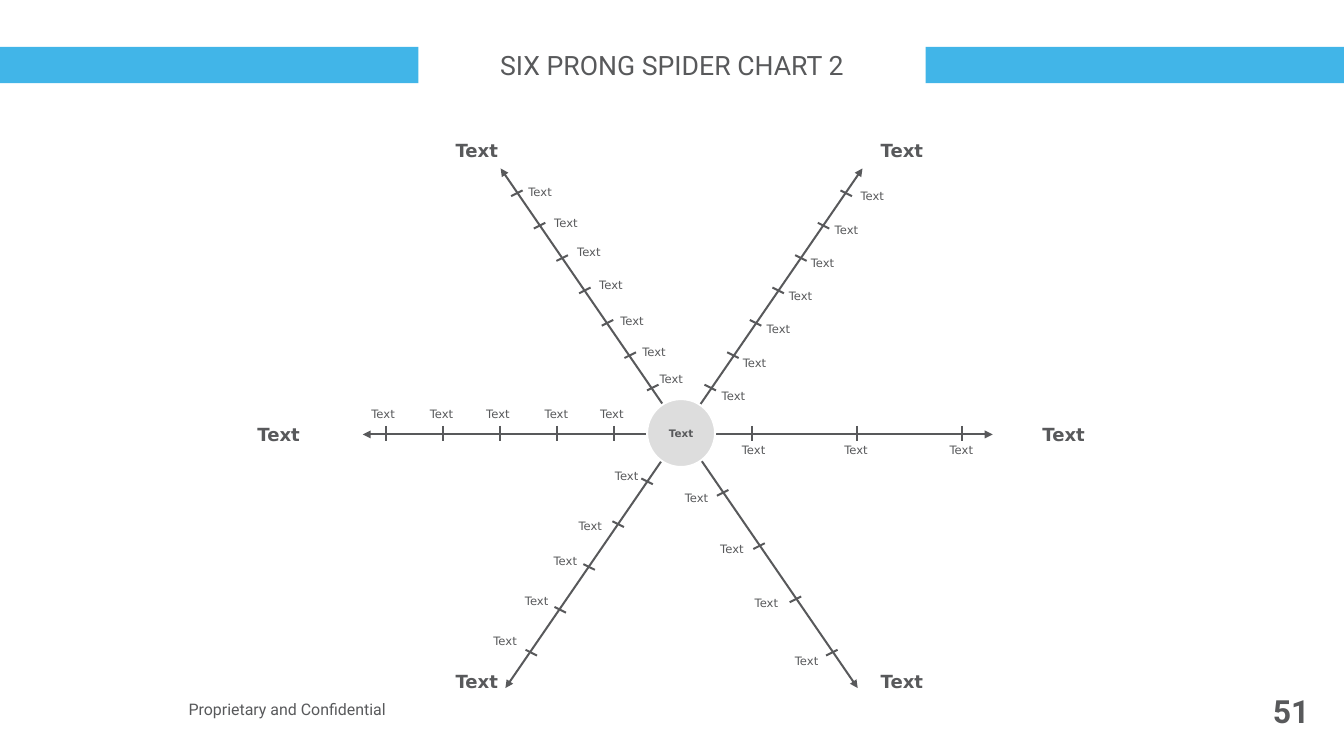
from dataclasses import dataclass

from lxml.etree import SubElement
from pptx import Presentation
from pptx.dml.color import RGBColor
from pptx.enum.shapes import MSO_CONNECTOR, MSO_SHAPE
from pptx.enum.text import MSO_ANCHOR, PP_ALIGN
from pptx.oxml.ns import qn
from pptx.shapes.autoshape import Shape
from pptx.slide import Slide
from pptx.util import Inches, Pt

Point = tuple[float, float]
Box = tuple[float, float, float, float]


@dataclass(frozen=True)
class Theme:
    blue: str = "41B5E8"
    ink: str = "58595B"
    pale: str = "DDDDDD"
    white: str = "FFFFFF"
    line: float = 1.5
    sans: str = "Roboto"
    label: str = "DejaVu Sans"
    title: float = 20
    foot: float = 12
    page: float = 24
    head: float = 13.6
    tick: float = 8.7
    hub: float = 7.8


@dataclass(frozen=True)
class Prong:
    """Ticks run evenly from first to last, one for each label corner."""
    head: Point
    first: Point
    last: Point
    slant: Point
    labels: list[Point]
    align: PP_ALIGN = PP_ALIGN.LEFT


THEME = Theme()
AXES: list[tuple[Point, Point]] = [
    ((3.79, 4.54), (10.37, 4.54)),
    ((5.28, 7.19), (9.01, 1.76)),
    ((8.96, 7.19), (5.23, 1.76)),
]
DOWN, UP, PLUMB = (0.06, 0.03), (0.06, -0.03), (0, 0.08)
PRONGS = [
    Prong((9.15, 1.41), (7.42, 4.05), (8.84, 2.02), DOWN,
          [(7.49, 4.01), (7.71, 3.67), (7.96, 3.32), (8.19, 2.97),
           (8.42, 2.62), (8.67, 2.28), (8.94, 1.93)]),
    Prong((4.71, 1.41), (6.82, 4.05), (5.4, 2.02), UP,
          [(6.84, 3.84), (6.66, 3.56), (6.43, 3.23), (6.21, 2.86),
           (5.98, 2.51), (5.74, 2.21), (5.47, 1.88)]),
    Prong((2.64, 4.38), (6.41, 4.53), (4.03, 4.53), PLUMB,
          [(x, 4.2) for x in (6.22, 5.64, 5.03, 4.44, 3.83)]),
    Prong((10.84, 4.38), (7.86, 4.53), (10.05, 4.53), PLUMB,
          [(x, 4.58) for x in (7.7, 8.77, 9.87)]),
    Prong((4.71, 6.96), (6.76, 5.03), (5.55, 6.82), DOWN,
          [(6.35, 4.85), (5.97, 5.37), (5.71, 5.74), (5.41, 6.16),
           (5.08, 6.58)], PP_ALIGN.RIGHT),
    Prong((9.15, 6.96), (7.55, 5.15), (8.69, 6.82), UP,
          [(7.08, 5.08), (7.45, 5.61), (7.81, 6.18), (8.23, 6.78)],
          PP_ALIGN.RIGHT),
]


def paint(slide: Slide, kind: MSO_SHAPE, box: Box, fill: str) -> Shape:
    shape = slide.shapes.add_shape(kind, *map(Inches, box))
    shape.shadow.inherit = False
    shape.fill.solid()
    shape.fill.fore_color.rgb = RGBColor.from_string(fill)
    shape.line.fill.background()
    return shape


def write(shape: Shape, text: str, size: float, font: str,
          bold: bool = False, align: PP_ALIGN = PP_ALIGN.LEFT,
          anchor: MSO_ANCHOR = MSO_ANCHOR.MIDDLE,
          inset: float = 0.05, wrap: bool = False) -> None:
    frame = shape.text_frame
    frame.word_wrap = wrap
    frame.vertical_anchor = anchor
    frame.margin_left = frame.margin_right = Inches(inset)
    frame.margin_top = frame.margin_bottom = Inches(inset)
    para = frame.paragraphs[0]
    para.alignment = align
    run = para.add_run()
    run.text = text
    run.font.size = Pt(size)
    run.font.name = font
    run.font.bold = bold
    run.font.color.rgb = RGBColor.from_string(THEME.ink)


def add_text(slide: Slide, box: Box) -> Shape:
    return slide.shapes.add_textbox(*map(Inches, box))


def draw_line(slide: Slide, start: Point, end: Point,
              arrows: bool = False) -> None:
    line = slide.shapes.add_connector(
        MSO_CONNECTOR.STRAIGHT, *map(Inches, (*start, *end)))
    line.line.color.rgb = RGBColor.from_string(THEME.ink)
    line.line.width = Pt(THEME.line)
    if arrows:
        for tag in ("a:headEnd", "a:tailEnd"):
            SubElement(line.line._get_or_add_ln(), qn(tag), type="triangle")
    SubElement(line._element.spPr, qn("a:effectLst"))


def draw_prong(slide: Slide, prong: Prong) -> None:
    (x1, y1), (x2, y2) = prong.first, prong.last
    dx, dy = prong.slant
    for i, (left, top) in enumerate(prong.labels):
        part = i / (len(prong.labels) - 1)
        x, y = x1 + (x2 - x1) * part, y1 + (y2 - y1) * part
        draw_line(slide, (x - dx, y - dy), (x + dx, y + dy))
        write(add_text(slide, (left, top, 0.37, 0.25)), "Text", THEME.tick,
              THEME.label, align=prong.align, anchor=MSO_ANCHOR.TOP)
    write(add_text(slide, (*prong.head, 0.57, 0.33)), "Text", THEME.head,
          THEME.label, bold=True, anchor=MSO_ANCHOR.TOP)


def draw_frame(slide: Slide) -> None:
    """Draw the band, title, footer and page number."""
    paint(slide, MSO_SHAPE.RECTANGLE, (0, 0.49, 14.04, 0.38), THEME.blue)
    title = paint(slide, MSO_SHAPE.RECTANGLE, (4.37, 0.41, 5.3, 0.54),
                  THEME.white)
    write(title, "SIX PRONG SPIDER CHART 2", THEME.title, THEME.sans,
          align=PP_ALIGN.CENTER, inset=0.1, wrap=True)
    write(add_text(slide, (1.93, 7.09, 3.49, 0.65)),
          "Proprietary and Confidential", THEME.foot, THEME.sans,
          inset=0.04, wrap=True)
    write(add_text(slide, (13.08, 7.22, 0.6, 0.41)), "51", THEME.page,
          THEME.sans, bold=True, align=PP_ALIGN.RIGHT, inset=0)


def draw_hub(slide: Slide) -> None:
    hub = paint(slide, MSO_SHAPE.OVAL, (6.76, 4.17, 0.71, 0.71), THEME.pale)
    hub.line.color.rgb = RGBColor.from_string(THEME.white)
    hub.line.width = Pt(THEME.line)
    write(hub, "Text", THEME.hub, THEME.label, bold=True,
          align=PP_ALIGN.CENTER)


def main() -> None:
    deck = Presentation()
    deck.slide_width, deck.slide_height = Inches(14.04), Inches(7.9)
    slide = deck.slides.add_slide(deck.slide_layouts[6])
    draw_frame(slide)
    for start, end in AXES:
        draw_line(slide, start, end, arrows=True)
    for prong in PRONGS:
        draw_prong(slide, prong)
    draw_hub(slide)
    deck.save("out.pptx")


if __name__ == "__main__":
    main()
